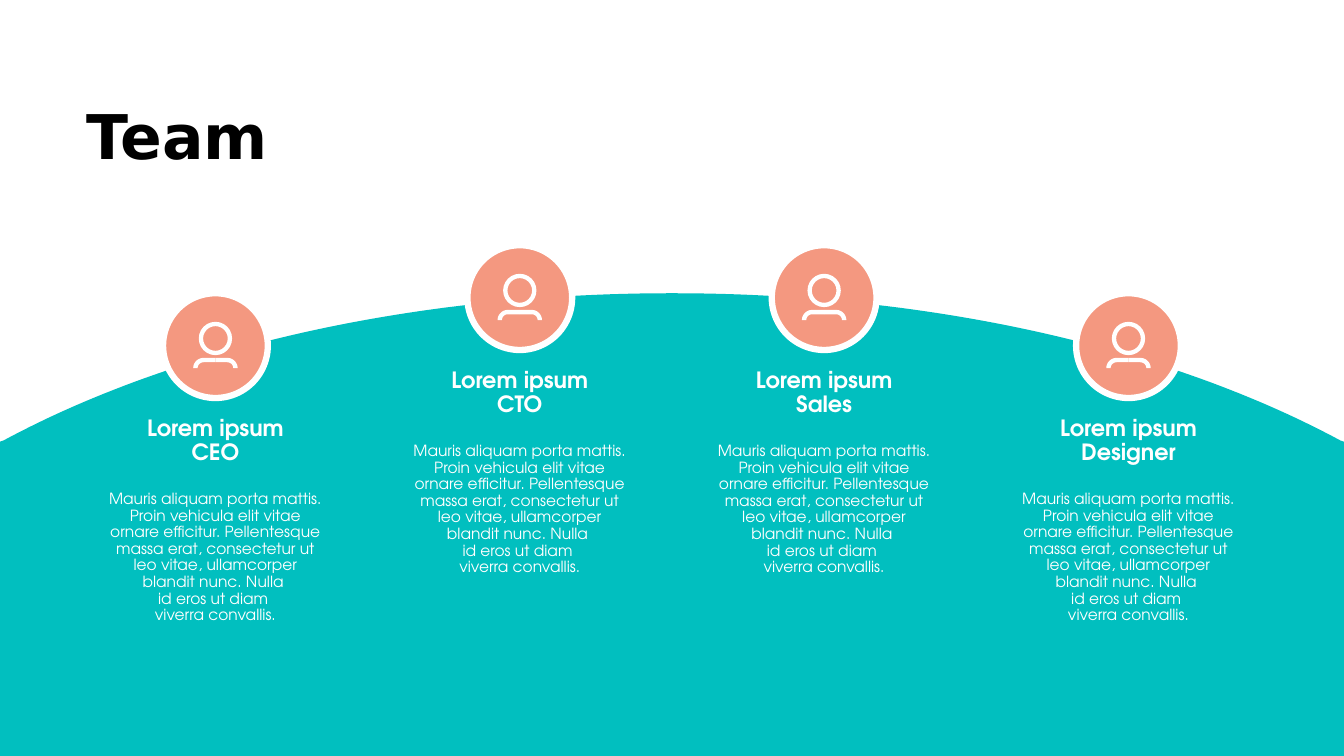
from math import cos, pi, sin

from pptx import Presentation
from pptx.dml.color import RGBColor
from pptx.enum.shapes import MSO_SHAPE as SHAPE
from pptx.enum.text import MSO_ANCHOR as ANCHOR, MSO_AUTO_SIZE as AUTO, PP_ALIGN as ALIGN
from pptx.util import Cm, Pt

# Content
TITLE = "Team"
BIO = [
    "Mauris aliquam porta mattis. Proin vehicula elit vitae ornare efficitur. "
    "Pellentesque massa erat, consectetur ut leo vitae, ullamcorper blandit nunc. Nulla ",
    "id eros ut diam ",
    "viverra convallis.",
]
# Name, role, top of the badge in cm
TEAM = [
    ("Lorem ipsum", "CEO", 7.39),
    ("Lorem ipsum", "CTO", 6.18),
    ("Lorem ipsum", "Sales", 6.18),
    ("Lorem ipsum", "Designer", 7.39),
]
COLORS = {"hill": "01BFBF", "badge": "F49880", "white": "FFFFFF", "title": "000000"}
TITLE_FONT, TEXT_FONT = "DejaVu Sans", "TeX Gyre Adventor"

# Layout in cm
WIDTH, HEIGHT = 33.87, 19.05
FIRST_CENTER, PITCH = 5.43, 7.67
BADGE, HEAD, TEXT_WIDTH = 2.64, 0.84, 6.05
HILL_CURVE = [(WIDTH / 2, 7.39), (23.52, 7.39), (29.49, 8.79), (33.78, 11.1)]


def rgb(name):
    return RGBColor.from_string(COLORS[name])


def paint(sp, fill, line=None):
    sp.shadow.inherit = False
    sp.fill.solid()
    sp.fill.fore_color.rgb = rgb(fill)
    if line:
        sp.line.color.rgb = rgb(line)
        sp.line.width = Pt(4.5)
    else:
        sp.line.fill.background()


def add_outline(shapes, points, fill):
    (x, y), *rest = [(Cm(px), Cm(py)) for px, py in points]
    builder = shapes.build_freeform(x, y)
    builder.add_line_segments(rest, close=True)
    paint(builder.convert_to_shape(), fill)


def bezier(controls, steps=60):
    points = []
    for i in range(steps + 1):
        t = i / steps
        weights = ((1 - t) ** 3, 3 * t * (1 - t) ** 2, 3 * t * t * (1 - t), t ** 3)
        points.append(tuple(sum(w * c[k] for w, c in zip(weights, controls)) for k in (0, 1)))
    return points


def quarter(cx, cy, radius, side, steps=12):
    """Arc from the top of a circle to its outer side."""
    angles = [i / steps * pi / 2 for i in range(steps + 1)]
    return [(cx + side * radius * sin(a), cy - radius * cos(a)) for a in angles]


def write(tf, lines, size, font, color, align, bold=False):
    tf.word_wrap = True
    tf.auto_size = AUTO.NONE
    tf.vertical_anchor = ANCHOR.TOP
    for i, line in enumerate(lines):
        p = tf.add_paragraph() if i else tf.paragraphs[0]
        p.alignment = align
        p.line_spacing = 0.9
        r = p.add_run()
        r.text = line
        r.font.size = Pt(size)
        r.font.name = font
        r.font.bold = bold
        r.font.color.rgb = rgb(color)


def add_caption(center, top, height, lines, size, bold=False):
    sp = s.shapes.add_textbox(Cm(center - TEXT_WIDTH / 2), Cm(top), Cm(TEXT_WIDTH), Cm(height))
    write(sp.text_frame, lines, size, TEXT_FONT, "white", ALIGN.CENTER, bold)


def add_person(center, top):
    shapes = s.shapes.add_group_shape().shapes
    head = shapes.add_shape(SHAPE.DONUT, Cm(center - HEAD / 2), Cm(top + 0.72), Cm(HEAD), Cm(HEAD))
    head.adjustments[0] = 0.13
    paint(head, "white")
    y = top + 1.63
    for side in (-1, 1):
        bend = center + side * 0.3
        outer = quarter(bend, y + 0.26, 0.26, side)
        inner = quarter(bend, y + 0.26, 0.15, side)
        add_outline(shapes, [(center, y), *outer, *inner[::-1], (center, y + 0.11)], "white")


prs = Presentation()
prs.slide_width, prs.slide_height = Cm(WIDTH), Cm(HEIGHT)
s = prs.slides.add_slide(prs.slide_layouts[5])

# Hill: the right half of the curve and its mirror
right = bezier(HILL_CURVE) + [(WIDTH, 11.13)]
left = [(WIDTH - x, y) for x, y in right]
add_outline(s.shapes, right + [(WIDTH, HEIGHT), (0, HEIGHT)] + left[::-1], "hill")

# Title
title = s.shapes.title
title.left, title.top, title.width, title.height = Cm(1.93), Cm(2.54), Cm(29.51), Cm(2.59)
write(title.text_frame, [TITLE], 44, TITLE_FONT, "title", ALIGN.LEFT, bold=True)

# Team members
for i, (name, role, top) in enumerate(TEAM):
    center = FIRST_CENTER + i * PITCH
    badge = s.shapes.add_shape(SHAPE.OVAL, Cm(center - BADGE / 2), Cm(top), Cm(BADGE), Cm(BADGE))
    paint(badge, "badge", "white")
    add_person(center, top)
    add_caption(center, top + 3, 1.68, [name, role], 16, bold=True)
    add_caption(center, top + 4.86, 5.31, BIO, 11)

prs.save("out.pptx")
